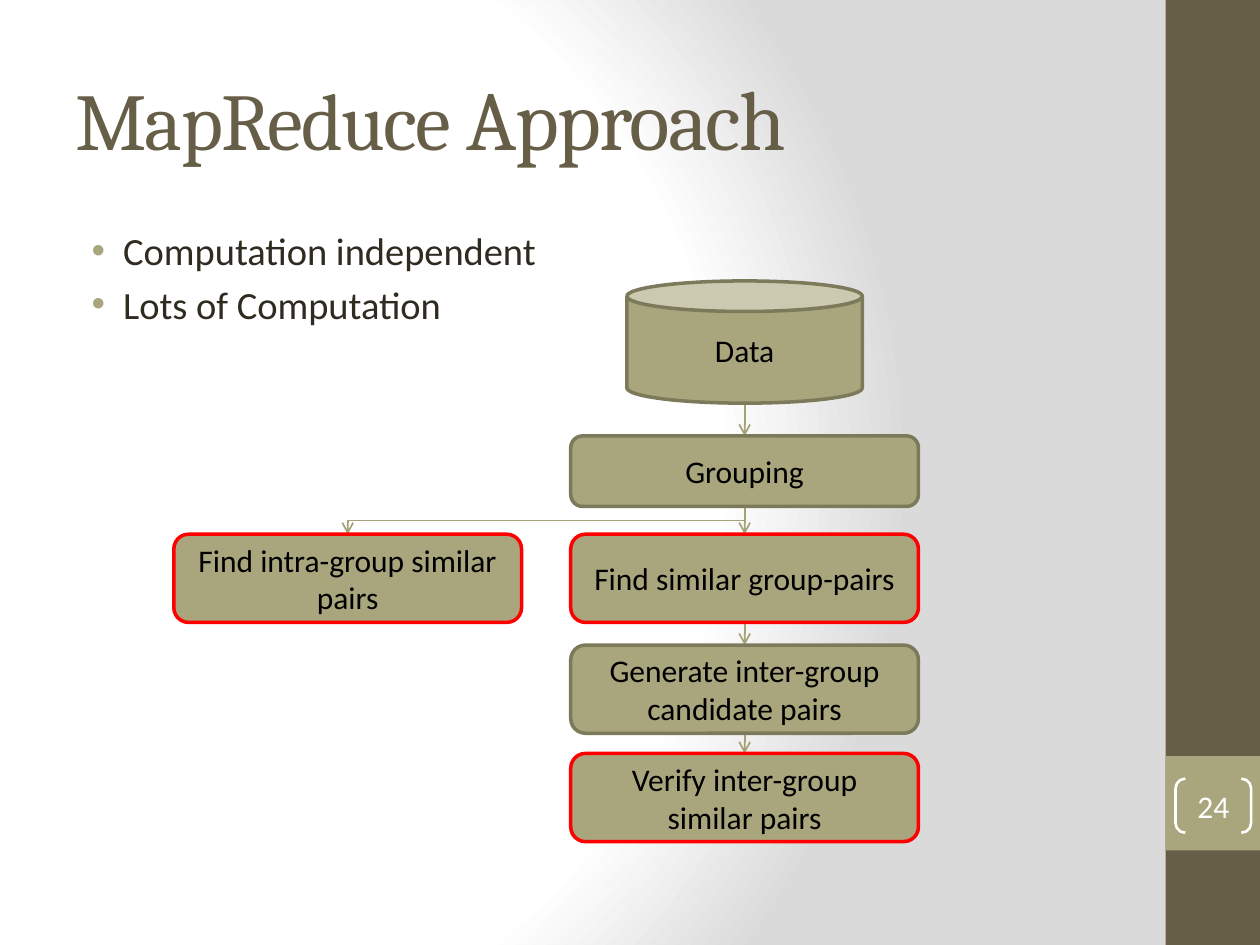
from lxml import etree
from pptx import Presentation, util as u
from pptx.dml.color import RGBColor
from pptx.enum import shapes, text
from pptx.oxml import ns, parse_xml

OLIVE, BROWN, EDGE, RED, WHITE = "A9A57C", "675E47", "7D7A5C", "FF0000", "FFFFFF"
KIND = shapes.MSO_SHAPE

deck = Presentation()
deck.slide_width, deck.slide_height = u.Inches(10), u.Inches(7.5)
slide = deck.slides.add_slide(deck.slide_layouts[6])
cell = deck.slide_width / 100  # grid of 100 columns by 75 rows


def color(code):
    return RGBColor.from_string(code)


def put(kind, box, fill=None, line=None, words=(), width=2, size=18, ink="000000",
        face="Calibri", align=text.PP_ALIGN.CENTER, anchor=text.MSO_ANCHOR.MIDDLE):
    """Place a shape (or a text box if kind is None) on the grid; return it."""
    box = [round(v * cell) for v in box]
    if kind is None:
        part = slide.shapes.add_textbox(*box)
    else:
        part = slide.shapes.add_shape(kind, *box)
        part.shadow.inherit = False
        for look, code in ((part.fill, fill), (part.line.fill, line)):
            if code:
                look.solid()
                look.fore_color.rgb = color(code)
            else:
                look.background()
        if line:
            part.line.width = u.Pt(width)
    frame = part.text_frame
    frame.word_wrap, frame.vertical_anchor = True, anchor
    for i, line_text in enumerate(words):
        para = frame.paragraphs[0] if i == 0 else frame.add_paragraph()
        para.alignment = align
        run = para.add_run()
        run.text = line_text
        for key, value in {"name": face, "size": u.Pt(size)}.items():
            setattr(run.font, key, value)
        run.font.color.rgb = color(ink)
    return part


# Background: white glow fading to grey
slide.background.fill.gradient()
glow = slide.element.find(".//" + ns.qn("a:gradFill"))
stops = "".join(f'<a:gs pos="{share}000"><a:srgbClr val="{code}"/></a:gs>'
                for share, code in ((0, WHITE), (75, WHITE), (100, "DADADA")))
glow.getparent().replace(glow, parse_xml(
    f'<a:gradFill {ns.nsdecls("a")} rotWithShape="1"><a:gsLst>{stops}</a:gsLst>'
    '<a:path path="circle"><a:fillToRect l="20000" t="50000" r="100000" b="50000"/>'
    '</a:path></a:gradFill>'))

# Side band and page number
put(KIND.RECTANGLE, (92.5, 0, 7.5, 75), BROWN)
put(KIND.RECTANGLE, (92.5, 60, 7.5, 7.5), OLIVE)
page = put(KIND.DOUBLE_BRACKET, (93.3, 61.8, 6, 4.3), None, WHITE, ["24"], 1.5, ink=WHITE)
page.adjustments[0] = 0.18
for side in ("left", "top", "right", "bottom"):
    setattr(page.text_frame, "margin_" + side, 0)

# Title
title = put(None, (5, 3, 83.3, 12.5), words=["MapReduce "], size=46, ink=BROWN,
            face="Cambria", align=text.PP_ALIGN.LEFT)
heading = title.text_frame.paragraphs[0]
approach = heading.add_run()
approach.text = "Approach"
for key, value in {"name": "Cambria", "size": u.Pt(48)}.items():
    setattr(approach.font, key, value)
approach.font.color.rgb = color(BROWN)
for run in heading.runs:
    run.font._element.set("spc", "-100")

# Arrows, drawn behind the steps
main, branch = 59.1, 27.6  # column centres
fork = 41.3
arrows = [(main, top, main, bottom) for top, bottom in
          ((32, 34.6), (40.2, 42.4), (49.4, 51.2), (58.3, 59.8))]
arrows.append((main, fork, branch, 42.4))
for ends in arrows:
    bent = ends[0] != ends[2]
    style = shapes.MSO_CONNECTOR.ELBOW if bent else shapes.MSO_CONNECTOR.STRAIGHT
    arrow = slide.shapes.add_connector(style, *[round(v * cell) for v in ends])
    arrow.line.color.rgb = color("A6A278")
    arrow.line.width = u.Pt(1)
    props = arrow._element.spPr
    if bent:
        props.find(ns.qn("a:prstGeom")).set("prst", "bentConnector2")
    etree.SubElement(props.find(ns.qn("a:ln")), ns.qn("a:tailEnd"), type="arrow")
    etree.SubElement(props, ns.qn("a:effectLst"))

# Steps: column centre, top row, width, height, edge, label
put(KIND.CAN, (main - 9.35, 22.3, 18.7, 9.7), OLIVE, EDGE, ["Data"])
for center, top, height, edge, label in (
        (main, 34.6, 5.6, EDGE, "Grouping"),
        (main, 42.4, 7, RED, "Find similar group-pairs"),
        (main, 51.2, 7, EDGE, "Generate inter-group candidate pairs"),
        (main, 59.8, 7, RED, "Verify inter-group similar pairs"),
        (branch, 42.4, 7, RED, "Find intra-group similar pairs")):
    put(KIND.ROUNDED_RECTANGLE, (center - 13.8, top, 27.6, height), OLIVE, edge, [label])

# Bullets
points = put(None, (5, 17.5, 83.3, 52.5), size=22, ink="2F2B20",
             words=["Computation independent", "Lots of Computation"],
             align=text.PP_ALIGN.LEFT, anchor=text.MSO_ANCHOR.TOP)
for para in points.text_frame.paragraphs:
    layout = para._p.get_or_add_pPr()
    for key, inches in {"marL": 0.38, "indent": -0.25}.items():
        layout.set(key, str(u.Inches(inches)))
    for xml in ('<a:spcBef {}><a:spcPct val="20000"/></a:spcBef>',
                '<a:buClr {}><a:srgbClr val="' + OLIVE + '"/></a:buClr>',
                '<a:buFont {} typeface="Arial"/>',
                '<a:buChar {} char="•"/>'):
        layout.append(parse_xml(xml.format(ns.nsdecls("a"))))

deck.save("out.pptx")
